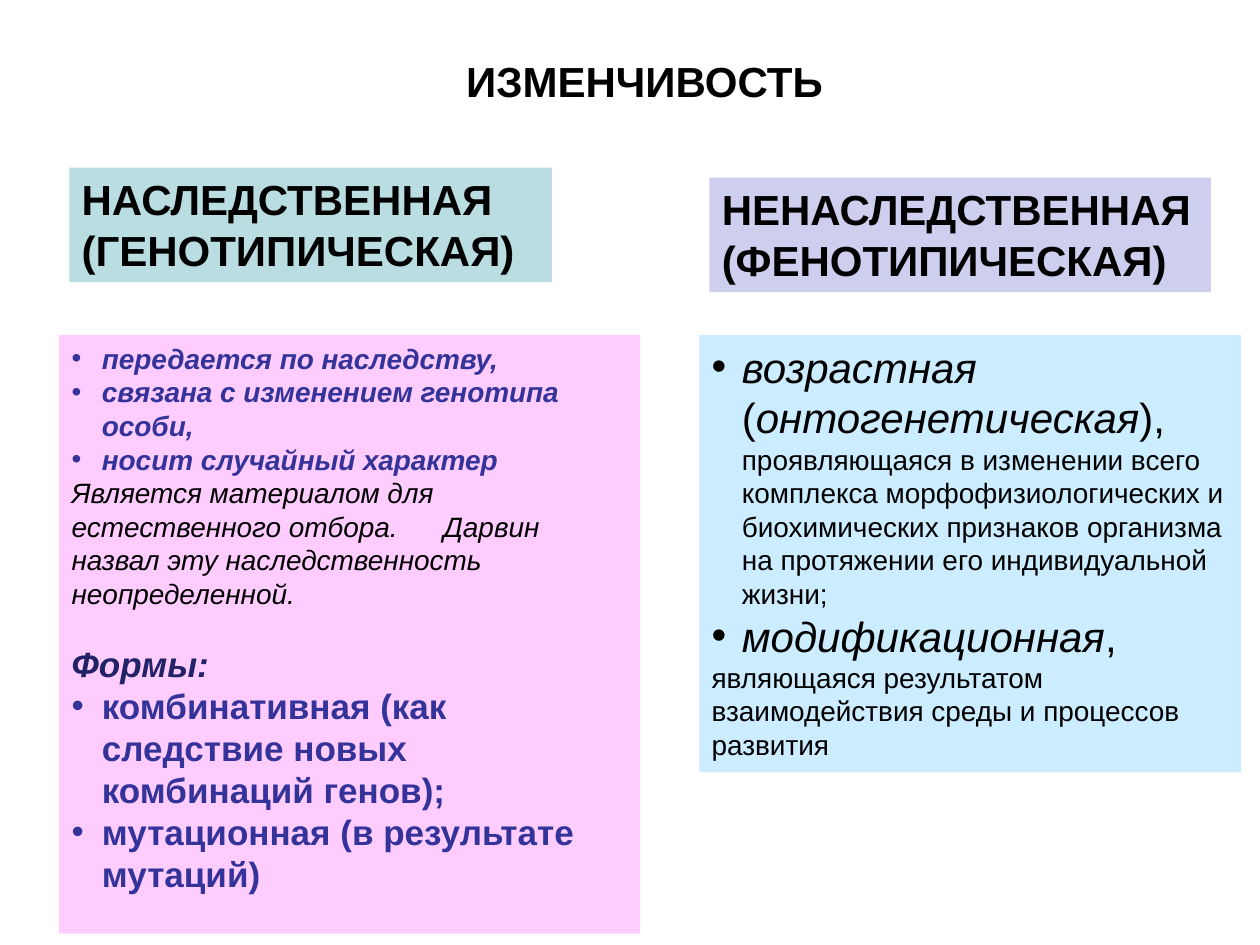
import pptx
import pptx.util
import pptx.dml.color
import pptx.enum.shapes
import pptx.enum.text
import pptx.oxml.ns
from lxml import etree

Inches = pptx.util.Inches
Pt = pptx.util.Pt
ALIGN = pptx.enum.text.PP_ALIGN

COLORS = {
    "text": "000000",
    "blue": "333399",
    "navy": "222267",
    "teal": "BADDE1",
    "lilac": "CECEEF",
    "sky": "CCECFF",
    "pink": "FFCCFF",
}


def shade(name):
    return pptx.dml.color.RGBColor.from_string(COLORS[name])


def add_mark(para, tag, **attrs):
    props = para._p.get_or_add_pPr()
    return etree.SubElement(props, pptx.oxml.ns.qn(tag), attrs)


def add_box(slide, box, fill):
    kind = pptx.enum.shapes.MSO_SHAPE.RECTANGLE
    shape = slide.shapes.add_shape(kind, *map(Inches, box))
    shape.shadow.inherit = False
    shape.fill.solid()
    shape.fill.fore_color.rgb = shade(fill)
    shape.line.fill.background()
    return set_frame(shape)


def set_frame(shape):
    frame = shape.text_frame
    frame.word_wrap = True
    frame.auto_size = pptx.enum.text.MSO_AUTO_SIZE.SHAPE_TO_FIT_TEXT
    frame.vertical_anchor = pptx.enum.text.MSO_ANCHOR.TOP
    return frame


def add_para(frame, text="", size=None, color="text", bold=False, italic=None,
             bullet=False, tab=None, before=0, align=ALIGN.LEFT):
    first = frame.paragraphs[0]
    para = frame.add_paragraph() if first.runs else first
    para.alignment = align
    if before:
        para.space_before = Pt(before)
    if bullet:
        props = para._p.get_or_add_pPr()
        indent = Inches(0.24)
        props.set("marL", str(indent))
        props.set("indent", str(-indent))
        add_mark(para, "a:buFont", typeface="Arial")
        add_mark(para, "a:buChar", char="•")
    if tab:
        stops = add_mark(para, "a:tabLst")
        etree.SubElement(stops, pptx.oxml.ns.qn("a:tab"),
                         {"pos": str(Inches(tab)), "algn": "l"})
    font = para.font
    font.name = "Arial"
    font.bold = bold
    font.color.rgb = shade(color)
    if size:
        font.size = Pt(size)
    if italic is not None:
        font.italic = italic
    if text:
        para.add_run().text = text
    return para


def add_runs(para, parts):
    for text, size, italic in parts:
        run = para.add_run()
        run.text = text
        run.font.size = Pt(size)
        run.font.italic = italic


def add_title(slide, box):
    frame = set_frame(slide.shapes.add_textbox(*map(Inches, box)))
    add_para(frame, "ИЗМЕНЧИВОСТЬ", 24, bold=True, align=ALIGN.CENTER)


def add_head(slide, box, fill, text):
    add_para(add_box(slide, box, fill), text, 24, bold=True)


def add_types(slide, box):
    frame = add_box(slide, box, "sky")
    add_runs(add_para(frame, bullet=True), [
        ("возрастная ", 24, True),
        ("(", 24, False),
        ("онтогенетическая", 24, True),
        ("), ", 24, False),
        ("проявляющаяся в изменении всего комплекса морфофизиологических "
         "и биохимических признаков организма на протяжении его "
         "индивидуальной жизни;", 16, False),
    ])
    add_runs(add_para(frame, bullet=True), [
        ("модификационная", 24, True),
        (",", 24, False),
    ])
    add_para(frame, "являющаяся результатом взаимодействия среды и "
             "процессов развития", 16)


def add_traits(slide, box):
    frame = add_box(slide, box, "pink")
    for text in ("передается по наследству,",
                 "связана с изменением генотипа особи,",
                 "носит случайный характер"):
        add_para(frame, text, 16, "blue", True, True, bullet=True)
    add_para(frame, "Является материалом для естественного отбора.\tДарвин "
             "назвал эту наследственность неопределенной.",
             16, italic=True, tab=2.95)
    add_para(frame, "Формы:", 20, "navy", True, True, before=18.4)
    for text in ("комбинативная (как следствие новых комбинаций генов);",
                 "мутационная (в результате мутаций)"):
        add_para(frame, text, 20, "blue", True, bullet=True)


def main():
    deck = pptx.Presentation()
    deck.slide_width = Inches(10)
    deck.slide_height = Inches(7.5)
    slide = deck.slides.add_slide(deck.slide_layouts[6])
    add_title(slide, (0.86, 0.39, 8.51, 0.5))
    add_head(slide, (0.55, 1.33, 3.83, 0.91), "teal",
             "НАСЛЕДСТВЕННАЯ (ГЕНОТИПИЧЕСКАЯ)")
    add_head(slide, (5.63, 1.41, 3.98, 0.91), "lilac",
             "НЕНАСЛЕДСТВЕННАЯ(ФЕНОТИПИЧЕСКАЯ)")
    add_types(slide, (5.55, 2.66, 4.3, 3.47))
    add_traits(slide, (0.47, 2.66, 4.61, 4.75))
    deck.save("out.pptx")


if __name__ == "__main__":
    main()
